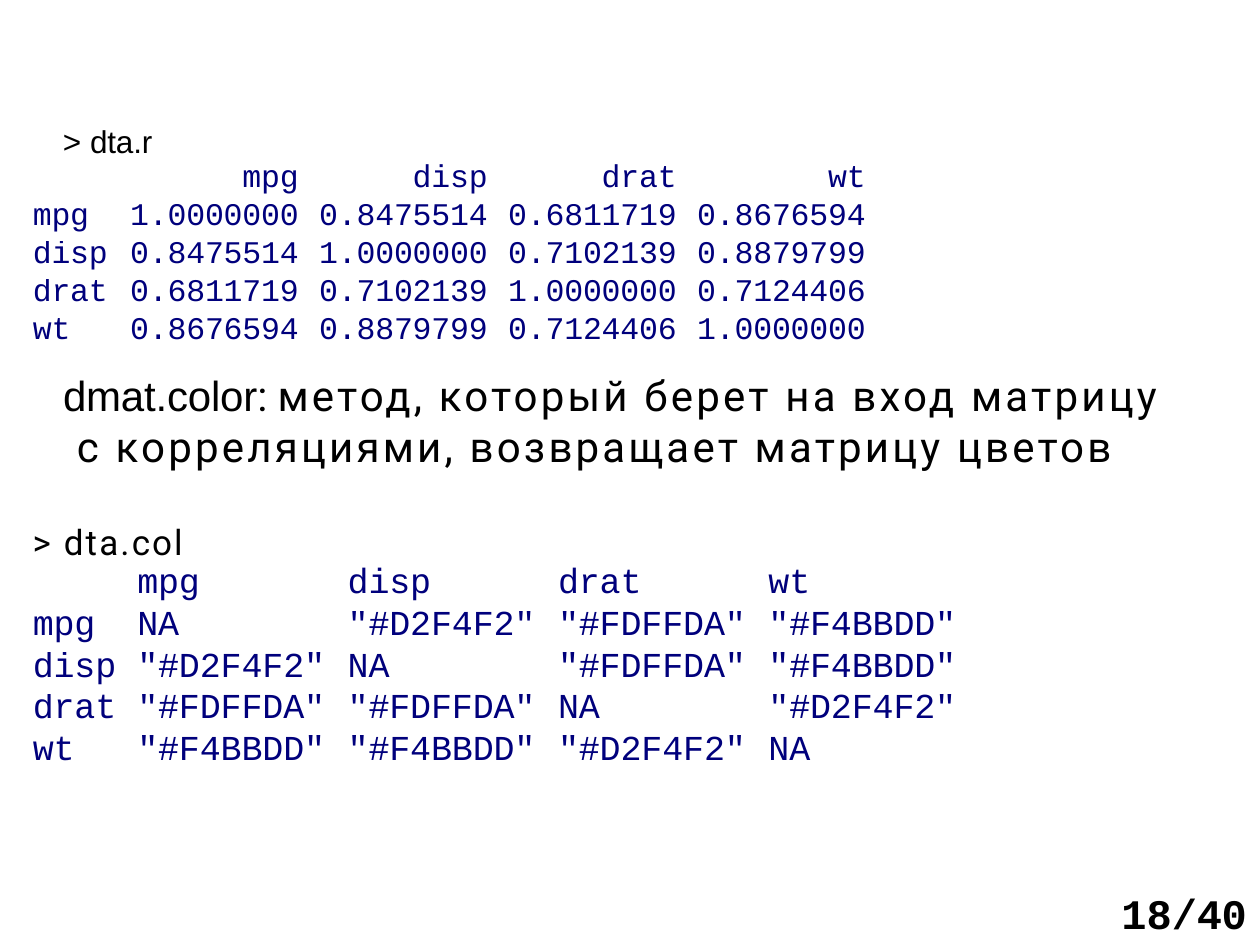
from pptx import Presentation
from pptx.dml.color import RGBColor
from pptx.enum.text import PP_ALIGN
from pptx.util import Inches, Pt

LEFT, RIGHT = PP_ALIGN.LEFT, PP_ALIGN.RIGHT
BLACK, NAVY = "000000", "00007C"
SANS, MONO, BODY = "Arial", "Courier New", "Roboto"
NAMES = ["mpg", "disp", "drat", "wt"]
CORR = [
    ["1.0000000", "0.8475514", "0.6811719", "0.8676594"],
    ["0.8475514", "1.0000000", "0.7102139", "0.8879799"],
    ["0.6811719", "0.7102139", "1.0000000", "0.7124406"],
    ["0.8676594", "0.8879799", "0.7124406", "1.0000000"],
]
COLORS = [
    ["NA", '"#D2F4F2"', '"#FDFFDA"', '"#F4BBDD"'],
    ['"#D2F4F2"', "NA", '"#FDFFDA"', '"#F4BBDD"'],
    ['"#FDFFDA"', '"#FDFFDA"', "NA", '"#D2F4F2"'],
    ['"#F4BBDD"', '"#F4BBDD"', '"#D2F4F2"', "NA"],
]


def paint(font, color):
    """Set a font colour from a hex string."""
    font.color.rgb = RGBColor.from_string(color)


def style(run, size, face, color, gap=0, bold=False):
    """Format one run, with gap as letter spacing in points."""
    font = run.font
    font.size, font.name, font.bold = Pt(size), face, bold
    paint(font, color)
    run._r.get_or_add_rPr().set("spc", str(round(gap * 100)))


def layout(para, indent, pitch=None, align=LEFT):
    """Set indent, line pitch and alignment of a paragraph."""
    para.alignment = align
    para._p.get_or_add_pPr().set("marL", str(Inches(indent)))
    if pitch:
        para.line_spacing = Pt(pitch)


def add_text(slide, box, lines, size, pitch=None, bold=False):
    """Add a text box; each line is an indent and its (text, face, gap) runs."""
    frame = slide.shapes.add_textbox(*map(Inches, box)).text_frame
    frame.word_wrap = True
    frame.margin_left = frame.margin_right = 0
    frame.margin_top = frame.margin_bottom = 0
    for i, (indent, runs) in enumerate(lines):
        para = frame.add_paragraph() if i else frame.paragraphs[0]
        layout(para, indent, pitch)
        for text, face, gap in runs:
            run = para.add_run()
            run.text = text
            style(run, size, face, BLACK, gap, bold)


def add_matrix(slide, box, values, cols, rows, size, pitches, align, indent,
               pads):
    """Add a plain table with variable names along the top and left."""
    grid = [[""] + NAMES] + [[n] + v for n, v in zip(NAMES, values)]
    shape = slide.shapes.add_table(len(rows), len(cols), *map(Inches, box))
    table = shape.table
    table.first_row = table.horz_banding = False
    for col, width in zip(table.columns, cols):
        col.width = Inches(width)
    for r, line in enumerate(grid):
        table.rows[r].height = Inches(rows[r])
        for c, text in enumerate(line):
            cell = table.cell(r, c)
            cell.fill.background()
            cell.margin_left = cell.margin_top = cell.margin_bottom = 0
            cell.margin_right = Inches(pads[c])
            para = cell.text_frame.paragraphs[0]
            para.text = text
            layout(para, indent if c else 0.02, pitches[min(r, 1)],
                   align if c else LEFT)
            for run in para.runs:
                style(run, size, MONO, NAVY, -0.1)


def main():
    """Build the slide and save it."""
    deck = Presentation()
    deck.slide_width, deck.slide_height = Inches(10), Inches(7.5)
    slide = deck.slides.add_slide(deck.slide_layouts[6])
    add_text(slide, (8.87, 7.12, 1.04, 0.34),
             [(0.03, [("18", MONO, 0), ("/40", MONO, -0.1)])],
             24, 23.4, True)
    add_text(slide, (0.49, 0.97, 0.9, 0.31),
             [(0.01, [("> ", SANS, 0), ("dta.r", SANS, -0.1)])], 18)
    add_matrix(slide, (0.24, 1.29, 6.65, 1.56), CORR,
               [0.7, 1.5, 1.5, 1.5, 1.45], [0.32, 0.3, 0.3, 0.3, 0.34],
               18, (19.8, 18.6), RIGHT, 0, [0, 0.07, 0.07, 0.07, 0.02])
    add_text(slide, (0.49, 2.93, 8.95, 0.82), [
        (0.01, [("dmat.color", SANS, -0.1), (": ", BODY, -0.1),
                ("метод, который берет на вход матрицу", BODY, 1.85)]),
        (0.12, [("с корреляциями, возвращает матрицу цветов", BODY, 1.85)]),
    ], 24, 29)
    add_text(slide, (0.25, 4.13, 1.29, 0.35),
             [(0.01, [("> dta.col", BODY, 1.2)])], 20)
    add_matrix(slide, (0.24, 4.49, 7.38, 1.73), COLORS,
               [0.77, 1.67, 1.67, 1.67, 1.61], [0.35, 0.33, 0.33, 0.33, 0.38],
               20, (21.9, 20.7), LEFT, 0.08, [0] * 5)
    deck.save("out.pptx")


if __name__ == "__main__":
    main()
